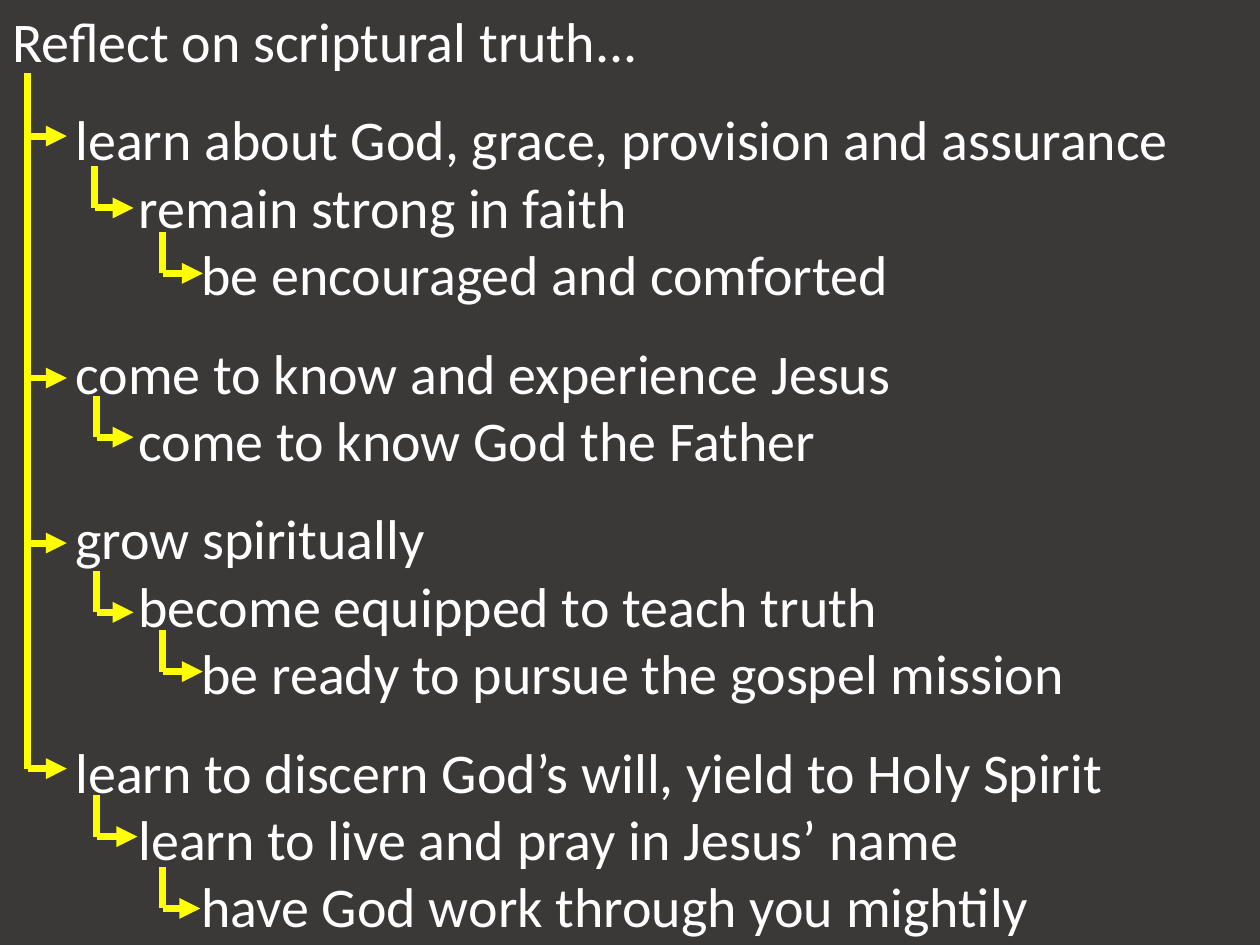
from typing import NamedTuple

from lxml import etree
from pptx import Presentation
from pptx.dml.color import RGBColor
from pptx.enum.shapes import MSO_CONNECTOR
from pptx.enum.text import MSO_AUTO_SIZE
from pptx.oxml.ns import qn
from pptx.slide import Slide
from pptx.util import Inches, Pt

STRAIGHT = MSO_CONNECTOR.STRAIGHT
GROW_TO_TEXT = MSO_AUTO_SIZE.SHAPE_TO_FIT_TEXT

BACKGROUND = RGBColor(0x3B, 0x38, 0x38)
TEXT_COLOR = RGBColor(0xFF, 0xFF, 0xFF)
ARROW_COLOR = RGBColor(0xFF, 0xFF, 0x00)

FONT = "Calibri"
BLANK_LAYOUT = 6
INDENT_STEP = 0.5
TRUNK_X, TRUNK_TOP = 0.22, 0.58
BRANCH_TIP_X = 0.53
HOOK_DROP = 0.33


class Thought(NamedTuple):
    depth: int
    wording: str


class Hook(NamedTuple):
    """Elbow that drops from one thought and points at the next."""
    stem_x: float
    tip_x: float
    y: float


THOUGHTS = [
    Thought(0, "Reflect on scriptural truth..."),
    Thought(1, "learn about God, grace, provision and assurance"),
    Thought(2, "remain strong in faith"),
    Thought(3, "be encouraged and comforted"),
    Thought(1, "come to know and experience Jesus"),
    Thought(2, "come to know God the Father"),
    Thought(1, "grow spiritually"),
    Thought(2, "become equipped to teach truth"),
    Thought(3, "be ready to pursue the gospel mission"),
    Thought(1, "learn to discern God’s will, yield to Holy Spirit"),
    Thought(2, "learn to live and pray in Jesus’ name"),
    Thought(3, "have God work through you mightily"),
]

BRANCH_YS = [1.08, 3, 4.31, 6.1]

HOOKS = [
    Hook(0.75, 1.06, 1.65),
    Hook(1.29, 1.61, 2.17),
    Hook(0.77, 1.06, 3.47),
    Hook(0.77, 1.06, 4.86),
    Hook(1.29, 1.61, 5.33),
    Hook(0.77, 1.09, 6.64),
    Hook(1.29, 1.59, 7.21),
]


def add_outline(slide: Slide, thoughts: list[Thought]) -> None:
    outline = slide.shapes.add_textbox(0, 0, Inches(10), Inches(7.57))
    frame = outline.text_frame
    frame.word_wrap = True
    frame.auto_size = GROW_TO_TEXT
    frame.text = "\n".join(thought.wording for thought in thoughts)
    for paragraph, thought in zip(frame.paragraphs, thoughts):
        # Left margin by depth
        properties = paragraph._p.get_or_add_pPr()
        properties.set("marL", str(Inches(INDENT_STEP * thought.depth)))
        properties.set("indent", "0")
        if thought.depth == 1:
            paragraph.space_before = Pt(18)
        font = paragraph.runs[0].font
        font.name = FONT
        font.size = Pt(32)
        font.color.rgb = TEXT_COLOR


def add_line(slide: Slide, x1: float, y1: float, x2: float, y2: float,
             arrow: bool = False) -> None:
    connector = slide.shapes.add_connector(
        STRAIGHT, Inches(x1), Inches(y1), Inches(x2), Inches(y2))
    connector.line.color.rgb = ARROW_COLOR
    connector.line.width = Pt(4)
    if arrow:
        outline = connector.line._get_or_add_ln()
        etree.SubElement(outline, qn("a:tailEnd"), type="triangle")
    etree.SubElement(connector._element.spPr, qn("a:effectLst"))


def add_hook(slide: Slide, hook: Hook) -> None:
    add_line(slide, hook.stem_x, hook.y - HOOK_DROP, hook.stem_x, hook.y)
    add_line(slide, hook.stem_x, hook.y, hook.tip_x, hook.y, arrow=True)


def main() -> None:
    presentation = Presentation()
    presentation.slide_width = Inches(10)
    presentation.slide_height = Inches(7.5)
    slide = presentation.slides.add_slide(
        presentation.slide_layouts[BLANK_LAYOUT])
    slide.background.fill.solid()
    slide.background.fill.fore_color.rgb = BACKGROUND

    add_outline(slide, THOUGHTS)

    # Trunk with a branch to each main thought
    add_line(slide, TRUNK_X, TRUNK_TOP, TRUNK_X, BRANCH_YS[-1])
    for y in BRANCH_YS:
        add_line(slide, TRUNK_X, y, BRANCH_TIP_X, y, arrow=True)

    # Hooks to the nested thoughts
    for hook in HOOKS:
        add_hook(slide, hook)

    presentation.save("out.pptx")


if __name__ == "__main__":
    main()
